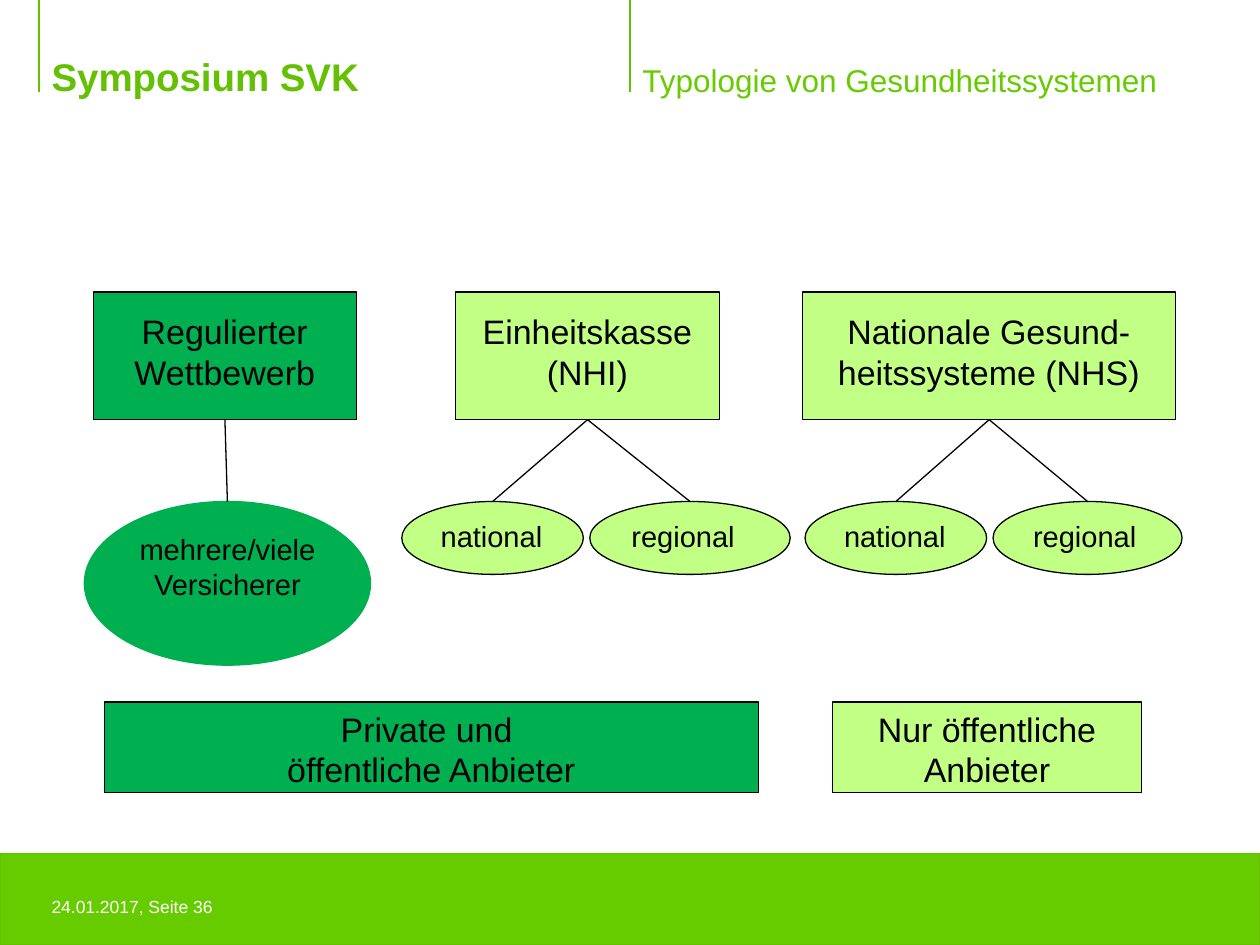
from lxml.etree import SubElement
from pptx import Presentation
from pptx.dml.color import RGBColor
from pptx.enum.shapes import MSO_CONNECTOR, MSO_SHAPE as SHAPE
from pptx.enum.text import MSO_ANCHOR as ANCHOR, PP_ALIGN as ALIGN
from pptx.oxml.ns import qn
from pptx.util import Cm, Pt

COLORS = {"band": "66CC00", "accent": "63C002", "dark": "00B050",
          "light": "C2FF85", "black": "000000", "white": "FFFFFF"}
RGB = {name: RGBColor.from_string(value) for name, value in COLORS.items()}

deck = Presentation()
deck.slide_width, deck.slide_height = Cm(25.4), Cm(19.05)
page = deck.slides.add_slide(deck.slide_layouts[6])


def write(box, text, size, color, align=ALIGN.LEFT, bold=False, spacing=1.0, **frame_format):
    """Fill a shape with one paragraph per line; extra values go to its text frame."""
    frame = box.text_frame
    settings = {"word_wrap": True, "vertical_anchor": ANCHOR.TOP, **frame_format}
    for name, value in settings.items():
        setattr(frame, name, value)
    for number, line in enumerate(text.split("\n")):
        para = frame.add_paragraph() if number else frame.paragraphs[0]
        para.alignment, para.line_spacing = align, spacing
        span = para.add_run()
        span.text = line
        span.font.color.rgb = RGB[color]
        font_format = {"name": "Arial", "size": Pt(size), "bold": bold}
        for name, value in font_format.items():
            setattr(span.font, name, value)


def add_line(x1, y1, x2, y2, color, width):
    line = page.shapes.add_connector(
        MSO_CONNECTOR.STRAIGHT, Cm(x1), Cm(y1), Cm(x2), Cm(y2))
    line.line.color.rgb, line.line.width = RGB[color], Pt(width)
    SubElement(line._element.spPr, qn("a:effectLst"))
    return line


# Footer band and header rules
band = page.shapes.add_shape(SHAPE.RECTANGLE, 0, Cm(17.2), deck.slide_width, Cm(1.85))
band.shadow.inherit = False
band.fill.solid()
band.fill.fore_color.rgb = RGB["band"]
band.line.color.rgb, band.line.width = RGB["accent"], Pt(0.75)
for x in (12.7, 0.79):
    add_line(x, 0, x, 1.85, "accent", 1.25)

# Header and footer texts
for place, text, size, color, text_format in (
    ((0.79, 0.94, 12.12, 1.19), "Symposium SVK", 22, "accent",
     {"bold": True, "vertical_anchor": ANCHOR.BOTTOM}),
    ((12.7, 0.18, 11.13, 1.95), "Typologie von Gesundheitssystemen", 18, "band",
     {"spacing": 0.9, "vertical_anchor": ANCHOR.BOTTOM}),
    ((0.79, 17.86, 11.13, 0.86), "24.01.2017, Seite 36", 10, "white", {"spacing": 1.2}),
):
    box = page.shapes.add_textbox(*map(Cm, place))
    write(box, text, size, color, **text_format)

# Diagram: systems, their carriers and the providers
SYSTEM_TOP, SYSTEM_HEIGHT = 5.89, 2.57
CARRIER_TOP, CARRIER_HEIGHT = 10.11, 1.47
PROVIDER_TOP, PROVIDER_HEIGHT = 14.15, 1.83

system_format = {"size": 19.4, "align": ALIGN.CENTER, "margin_top": Cm(0.38)}
provider_format = {"size": 19.4, "align": ALIGN.CENTER}
insurer_format = {"size": 16.6, "align": ALIGN.CENTER,
                  "margin_left": Cm(0.13), "margin_right": Cm(0.13)}
carrier_format = {"size": 16.6, "margin_right": 0}

system_row = (SHAPE.RECTANGLE, SYSTEM_TOP, SYSTEM_HEIGHT, system_format)
insurer_row = (SHAPE.OVAL, CARRIER_TOP, 3.3, insurer_format)
carrier_row = (SHAPE.OVAL, CARRIER_TOP, CARRIER_HEIGHT, carrier_format)
provider_row = (SHAPE.RECTANGLE, PROVIDER_TOP, PROVIDER_HEIGHT, provider_format)

nodes = {}
for key, row, left, width, fill, outline, text in (
    ("competition", system_row, 1.88, 5.31, "dark", "black", "Regulierter Wettbewerb"),
    ("nhi", system_row, 9.19, 5.31, "light", "black", "Einheitskasse (NHI)"),
    ("nhs", system_row, 16.18, 7.52, "light", "black", "Nationale Gesund-heitssysteme (NHS)"),
    ("insurers", insurer_row, 1.7, 5.77, "dark", "dark", "mehrere/viele\nVersicherer"),
    ("nhi national", carrier_row, 8.1, 3.66, "light", "black", "national"),
    ("nhi regional", carrier_row, 11.89, 4.04, "light", "black", "regional"),
    ("nhs national", carrier_row, 16.23, 3.66, "light", "black", "national"),
    ("nhs regional", carrier_row, 20.02, 3.81, "light", "black", "regional"),
    ("mixed providers", provider_row, 2.11, 13.18, "dark", "black",
     "Private und \nöffentliche Anbieter"),
    ("public providers", provider_row, 16.79, 6.22, "light", "black",
     "Nur öffentliche Anbieter"),
):
    kind, top, height, text_format = row
    node = page.shapes.add_shape(kind, Cm(left), Cm(top), Cm(width), Cm(height))
    node.shadow.inherit = False
    node.fill.solid()
    node.fill.fore_color.rgb = RGB[fill]
    node.line.color.rgb, node.line.width = RGB[outline], Pt(0.75)
    write(node, text, color="black", **text_format)
    nodes[key] = node

# Each system is joined from its bottom side to the top of its carriers
for system, carrier in (
    ("competition", "insurers"),
    ("nhi", "nhi national"),
    ("nhi", "nhi regional"),
    ("nhs", "nhs national"),
    ("nhs", "nhs regional"),
):
    link = add_line(0, 0, 1, 1, "black", 0.75)
    link.begin_connect(nodes[system], 2)
    link.end_connect(nodes[carrier], 0)

deck.save("out.pptx")
